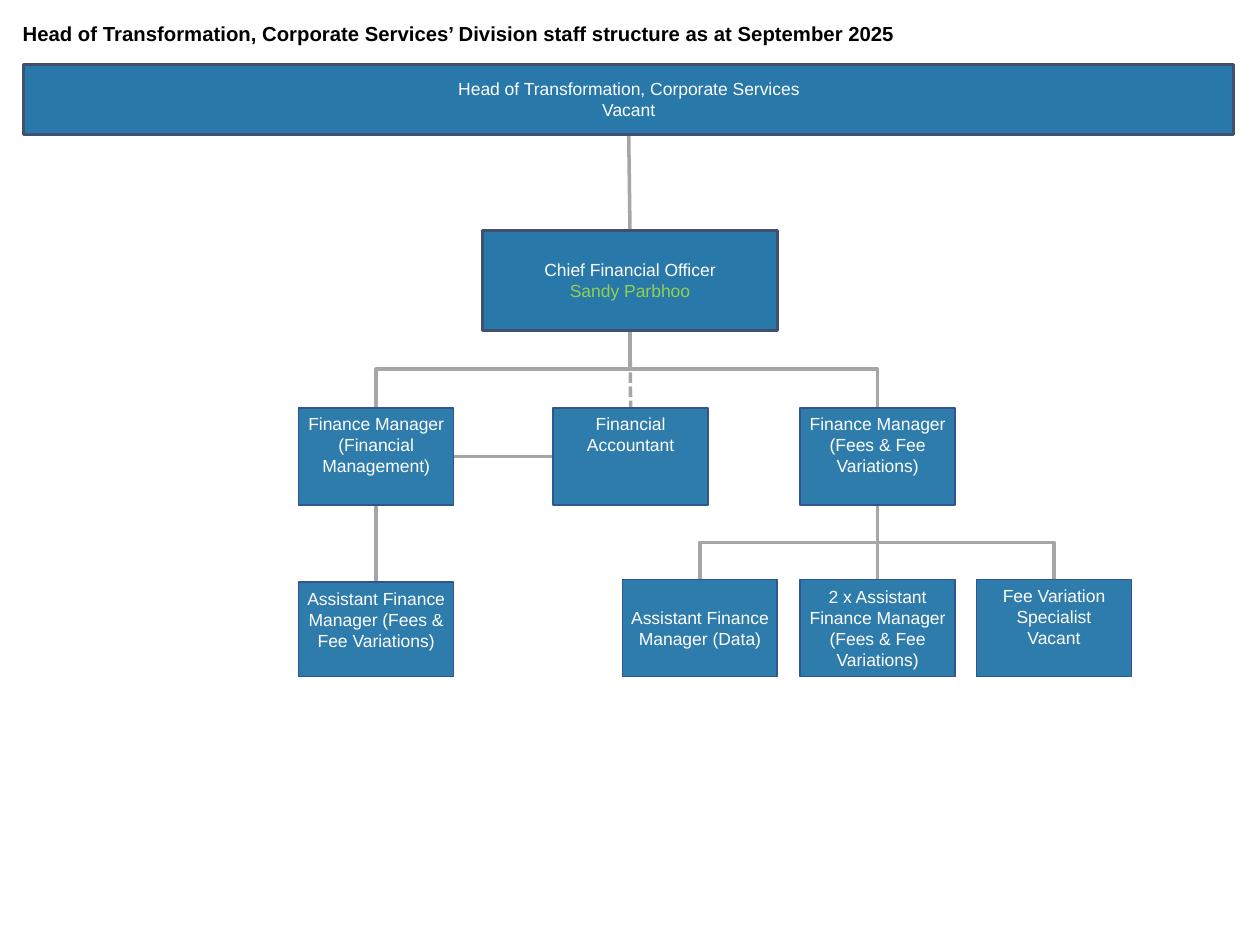
from dataclasses import dataclass
from pptx import Presentation
from pptx.dml.color import RGBColor as Rgb
from pptx.enum.dml import MSO_LINE_DASH_STYLE as Dash
from pptx.enum.shapes import MSO_CONNECTOR as Conn, MSO_SHAPE as Geom
from pptx.enum.text import MSO_ANCHOR as Anchor, PP_ALIGN as Align
from pptx.oxml.ns import qn
from pptx.oxml.xmlchemy import OxmlElement as Elem
from pptx.util import Inches, Pt

HEX = {"fill": "2878AA", "lead": "40516F", "staff": "325491",
       "link": "A6A6A6", "text": "FFFFFF", "name": "92D050", "title": "000000"}
WIDE, HIGH = 1.23, 0.77
ROW2, ROW3 = 3.24, 4.6
BOTTOM, LEFT, RIGHT, TOP = 2, 1, 3, 0


@dataclass
class Box:
    key: str
    left: float
    top: float
    lines: tuple
    width: float = WIDE
    height: float = HIGH
    lead: bool = False
    middle: bool = False
    pad: tuple = (0.04, 0.04)
    tint: str = "text"


@dataclass
class Link:
    start: str
    end: str
    bent: bool = False
    sides: tuple = (BOTTOM, TOP)
    dash: bool = False


SMALL = (0.02, 0.05)
BOXES = [
    Box("head", 0.19, 0.51, ("Head of Transformation, Corporate Services", "Vacant"),
        9.6, 0.56, True, True, (0.1, 0.05)),
    Box("chief", 3.83, 1.83, ("Chief Financial Officer", "Sandy Parbhoo"),
        2.34, 0.79, True, True, (0.1, 0.05), "name"),
    Box("funds", 2.37, ROW2, ("Finance Manager (Financial Management)",)),
    Box("books", 4.39, ROW2, ("Financial Accountant",)),
    Box("fees", 6.35, ROW2, ("Finance Manager (Fees & Fee Variations)",)),
    Box("aide", 2.37, 4.62, ("Assistant Finance Manager (Fees & Fee Variations)",),
        height=0.75, pad=SMALL),
    Box("data", 4.94, ROW3, ("Assistant Finance Manager (Data)",), middle=True, pad=SMALL),
    Box("pair", 6.35, ROW3, ("2 x Assistant Finance Manager (Fees & Fee Variations)",),
        pad=SMALL),
    Box("expert", 7.75, ROW3, ("Fee Variation Specialist", "Vacant")),
]
# Each link goes behind those before it, so the dashed one comes last.
LINKS = [
    Link("head", "chief"),
    Link("funds", "aide"),
    Link("funds", "books", sides=(RIGHT, LEFT)),
    Link("fees", "pair"),
    Link("fees", "data", bent=True),
    Link("fees", "expert", bent=True),
    Link("chief", "funds", bent=True),
    Link("chief", "fees", bent=True),
    Link("chief", "books", dash=True),
]


def style(font, tint: str, size: float = 10, bold: bool = False) -> None:
    look = {"name": "Arial", "size": Pt(size), "bold": bold}
    for key, value in look.items():
        setattr(font, key, value)
    font.color.rgb = Rgb.from_string(HEX[tint])


def pad(frame, side: float, edge: float) -> None:
    for key, value in {"left": side, "right": side, "top": edge, "bottom": edge}.items():
        setattr(frame, f"margin_{key}", Inches(value))


def add_title(slide) -> None:
    title = slide.shapes.title
    place = {"left": 0.08, "top": 0.14, "width": 7.84, "height": 0.29}
    for key, value in place.items():
        setattr(title, key, Inches(value))
    frame = title.text_frame
    pad(frame, 0.1, 0.05)
    frame.vertical_anchor = Anchor.MIDDLE
    frame.text = "Head of Transformation, Corporate Services’ Division staff structure as at September 2025"
    para = frame.paragraphs[0]
    para.alignment, para.line_spacing = Align.LEFT, 0.7
    style(para.runs[0].font, "title", 11.6, True)


def add_box(slide, box: Box):
    place = map(Inches, (box.left, box.top, box.width, box.height))
    shape = slide.shapes.add_shape(Geom.RECTANGLE, *place)
    shape.shadow.inherit = False
    shape.fill.solid()
    shape.fill.fore_color.rgb = Rgb.from_string(HEX["fill"])
    if not box.lead:
        alpha = Elem("a:alpha")
        alpha.set("val", "97000")
        shape.fill._xPr.find(qn("a:solidFill"))[0].append(alpha)
    shape.line.color.rgb = Rgb.from_string(HEX["lead" if box.lead else "staff"])
    shape.line.width = Pt(1.75 if box.lead else 1)
    frame = shape.text_frame
    frame.word_wrap = True
    frame.vertical_anchor = Anchor.MIDDLE if box.middle else Anchor.TOP
    pad(frame, *box.pad)
    for i, line in enumerate(box.lines):
        para = frame.add_paragraph() if i else frame.paragraphs[0]
        para.alignment = Align.CENTER
        run = para.add_run()
        run.text = line
        style(run.font, box.tint if i else "text")
    return shape


def turn(line, x1: int, y1: int, x2: int, y2: int) -> None:
    """Rotate an elbow so that it leaves and arrives vertically."""
    tall, wide = y2 - y1, abs(x2 - x1)
    line.left, line.top = (x1 + x2 - tall) // 2, (y1 + y2 - wide) // 2
    line.width, line.height = tall, wide
    xfrm = line._element.spPr.find(qn("a:xfrm"))
    for key in ("flipH", "flipV"):
        xfrm.attrib.pop(key, None)
    xfrm.set("rot", str((270 if x2 > x1 else 90) * 60000))
    if x2 > x1:
        xfrm.set("flipH", "1")


def add_link(slide, link: Link, shapes: dict) -> None:
    start, end = shapes[link.start], shapes[link.end]
    ends = (start.left + start.width // 2, start.top + start.height,
            end.left + end.width // 2, end.top)
    line = slide.shapes.add_connector(Conn.ELBOW if link.bent else Conn.STRAIGHT, *ends)
    if link.bent:
        turn(line, *ends)
    else:
        line.begin_connect(start, link.sides[0])
        line.end_connect(end, link.sides[1])
    line.line.color.rgb = Rgb.from_string(HEX["link"])
    line.line.width = Pt(2)
    if link.dash:
        line.line.dash_style = Dash.SQUARE_DOT
    line._element.spPr.append(Elem("a:effectLst"))
    slide.shapes._spTree.insert(2, line._element)


def main() -> None:
    deck = Presentation()
    deck.slide_width, deck.slide_height = Inches(10), Inches(7.5)
    slide = deck.slides.add_slide(deck.slide_layouts[5])
    add_title(slide)
    shapes = {box.key: add_box(slide, box) for box in BOXES}
    for link in LINKS:
        add_link(slide, link, shapes)
    deck.save("out.pptx")


if __name__ == "__main__":
    main()
